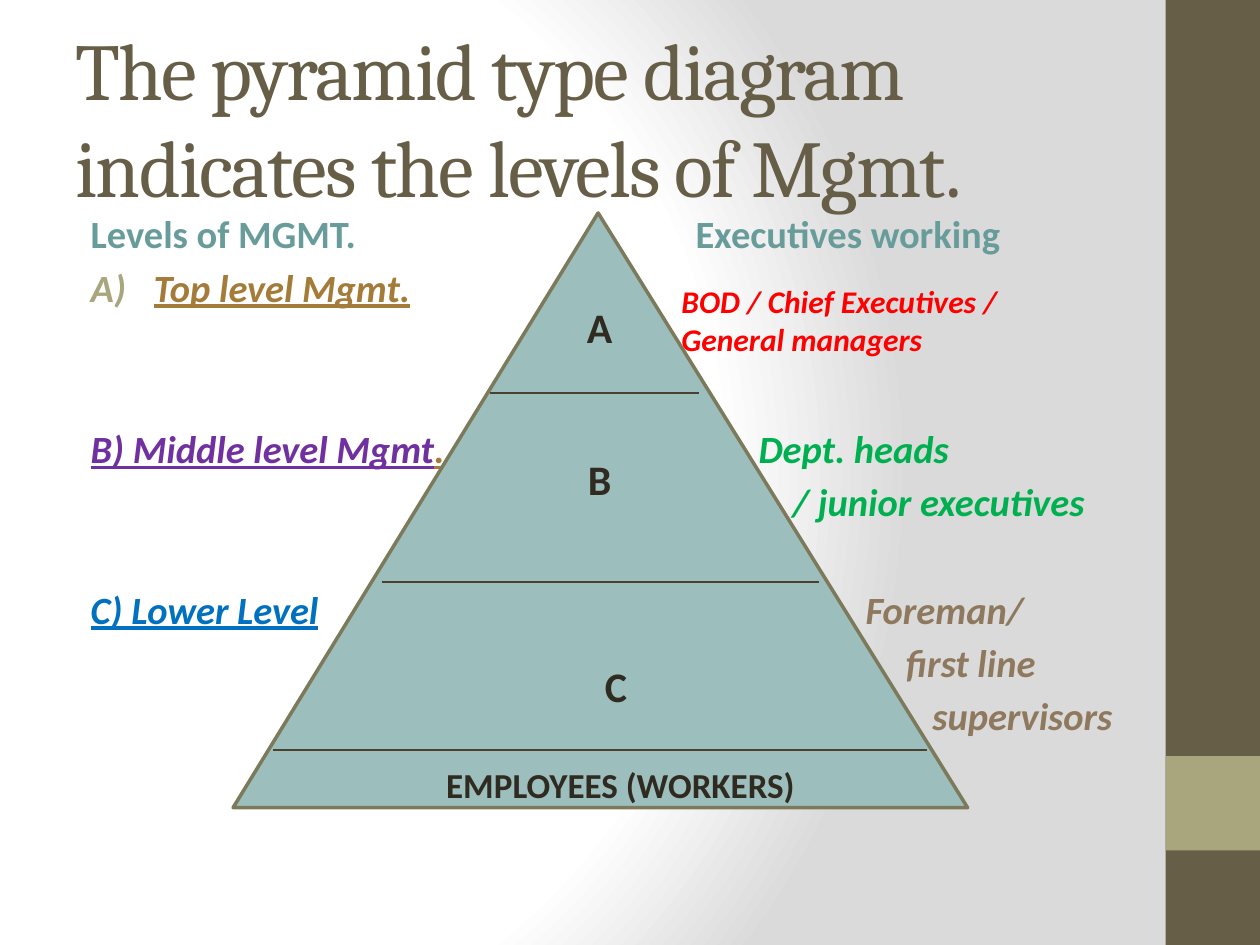
from pptx import Presentation
from pptx.dml.color import RGBColor
from pptx.enum.shapes import MSO_CONNECTOR as Connector, MSO_SHAPE as Shape
from pptx.enum.text import MSO_ANCHOR as Anchor, PP_ALIGN as Align
from pptx.oxml import parse_xml
from pptx.oxml.ns import nsdecls, qn
from pptx.util import Inches, Pt
from lxml.etree import SubElement

OLIVE, SAGE, TEAL, BROWN = "675E47", "A9A57C", "689C9A", "A47B38"
PURPLE, GREEN, BLUE, TAN, RED = "7030A0", "00B050", "0070C0", "8E795E", "FF0000"
INK, RULE, EDGE, PYRAMID = "2F2B20", "494231", "7D7A5C", "9CBEBD"


def color(value):
    return RGBColor.from_string(value)


class Deck:
    heading_font = "Cambria"
    body_font = "Calibri"

    def __init__(self, width, height):
        self.presentation = Presentation()
        self.presentation.slide_width = Inches(width)
        self.presentation.slide_height = Inches(height)
        self.slide = self.presentation.slides.add_slide(self.presentation.slide_layouts[6])

    def background(self, stops, focus):
        """Circular gradient; focus holds left, top, right, bottom in percent."""
        marks = "".join(
            f'<a:gs pos="{place * 1000}"><a:srgbClr val="{value}"/></a:gs>' for place, value in stops
        )
        sides = " ".join(f'{side}="{amount * 1000}"' for side, amount in zip("ltrb", focus))
        self.slide.element.cSld.insert(0, parse_xml(
            f'<p:bg {nsdecls("p", "a")}><p:bgPr><a:gradFill rotWithShape="1"><a:gsLst>{marks}</a:gsLst>'
            f'<a:path path="circle"><a:fillToRect {sides}/></a:path></a:gradFill>'
            "<a:effectLst/></p:bgPr></p:bg>"
        ))

    def shape(self, kind, box, fill, line=None, weight=2):
        shape = self.slide.shapes.add_shape(kind, *map(Inches, box))
        shape.shadow.inherit = False
        shape.fill.solid()
        shape.fill.fore_color.rgb = color(fill)
        if line:
            shape.line.color.rgb = color(line)
            shape.line.width = Pt(weight)
        else:
            shape.line.fill.background()
        return shape

    def line(self, left, right, y):
        points = map(Inches, (left, y, right, y))
        line = self.slide.shapes.add_connector(Connector.STRAIGHT, *points)
        line.line.color.rgb = color(RULE)
        line.line.width = Pt(1)
        SubElement(line.element.spPr, qn("a:effectLst"))

    def frame(self, box, anchor=Anchor.TOP):
        frame = self.slide.shapes.add_textbox(*map(Inches, box)).text_frame
        frame.word_wrap = True
        frame.vertical_anchor = anchor
        return frame

    def style(self, run, size, ink, bold=True, italic=False, underline=False, font=None):
        run.font.name = font or self.body_font
        run.font.size = Pt(size)
        run.font.color.rgb = color(ink)
        run.font.bold, run.font.italic, run.font.underline = bold, italic, underline

    def text(self, box, text, size, ink, align=Align.CENTER, anchor=Anchor.TOP, **style):
        frame = self.frame(box, anchor)
        frame.text = text
        paragraph = frame.paragraphs[0]
        paragraph.alignment = align
        self.style(paragraph.runs[0], size, ink, **style)
        return paragraph

    def rows(self, box, rows, size):
        """One paragraph a row: space before, tab stop, runs of (text, ink, italic, underline)."""
        frame = self.frame(box)
        frame.margin_left = frame.margin_right = 0
        paragraphs = []
        for index, (space, tab, runs) in enumerate(rows):
            paragraph = frame.add_paragraph() if index else frame.paragraphs[0]
            paragraph.space_before = Pt(space)
            if tab:
                tabs = SubElement(paragraph._p.get_or_add_pPr(), qn("a:tabLst"))
                SubElement(tabs, qn("a:tab"), pos=str(Inches(tab)), algn="l")
            for text, ink, italic, underline in runs:
                run = paragraph.add_run()
                run.text = text
                self.style(run, size, ink, italic=italic, underline=underline)
            paragraphs.append(paragraph)
        return paragraphs

    def letter(self, paragraph, ink, indent):
        """Automatic A) numbering with a hanging indent."""
        properties = paragraph._p.get_or_add_pPr()
        properties.set("marL", str(Inches(indent)))
        properties.set("indent", str(-Inches(indent)))
        SubElement(SubElement(properties, qn("a:buClr")), qn("a:srgbClr"), val=ink)
        SubElement(properties, qn("a:buAutoNum"), type="alphaUcParenR")


def main():
    deck = Deck(10, 7.5)

    # Background and side band
    deck.background([(0, "FFFFFF"), (75, "FFFFFF"), (100, "DADADA")], (20, 50, 100, 50))
    deck.shape(Shape.RECTANGLE, (9.25, 0, 0.75, 7.5), OLIVE)
    deck.shape(Shape.RECTANGLE, (9.25, 6, 0.75, 0.75), SAGE)

    # Title
    title = deck.text(
        (0.5, 0.3, 8.33, 1.25), "The pyramid type diagram indicates the levels of Mgmt.", 46, OLIVE,
        Align.LEFT, Anchor.MIDDLE, bold=False, font=deck.heading_font,
    )
    title.runs[0].font._element.set("spc", "-100")

    # Levels on the left, executives at tab stops on the right
    step, one_gap, two_gaps = 4, 35, 66
    levels = deck.rows((0.72, 1.62, 8.35, 5.51), [
        (step, 4.8, [("Levels of MGMT.\tExecutives working", TEAL, False, False)]),
        (step, None, [("Top level Mgmt.", BROWN, True, True)]),
        (two_gaps, 5.3, [("B) Middle level Mgmt", PURPLE, True, True), (".\t", BROWN, True, True),
                         ("Dept. heads", GREEN, True, False)]),
        (step, 5.57, [("\t/ junior executives", GREEN, True, False)]),
        (one_gap, 6.15, [("C) Lower Level\t", BLUE, True, True), ("Foreman/", TAN, True, False)]),
        (step, 6.47, [("\tfirst line", TAN, True, False)]),
        (step, 6.68, [("\tsupervisors", TAN, True, False)]),
    ], 22)
    deck.letter(levels[1], SAGE, 0.5)

    # Pyramid and its dividing lines
    pyramid = deck.shape(Shape.ISOSCELES_TRIANGLE, (1.85, 1.69, 5.83, 4.72), PYRAMID, EDGE)
    pyramid.adjustments[0] = 0.497
    for left, right, y in ((3.89, 5.55, 3.12), (3.03, 6.5, 4.62), (2.17, 7.36, 5.95)):
        deck.line(left, right, y)

    # Pyramid labels
    for letter, center, top in (("A", 4.76, 2.34), ("B", 4.76, 3.55), ("C", 4.89, 5.19)):
        deck.text((center - 0.4, top, 0.8, 0.5), letter, 24, INK)
    deck.text((3.35, 6.01, 3.15, 0.44), "EMPLOYEES (WORKERS)", 20, INK)

    # Top level executives
    deck.text((5.31, 2.19, 2.76, 0.71), "BOD / Chief Executives / General managers", 18, RED,
              Align.LEFT, italic=True)

    deck.presentation.save("out.pptx")


if __name__ == "__main__":
    main()
